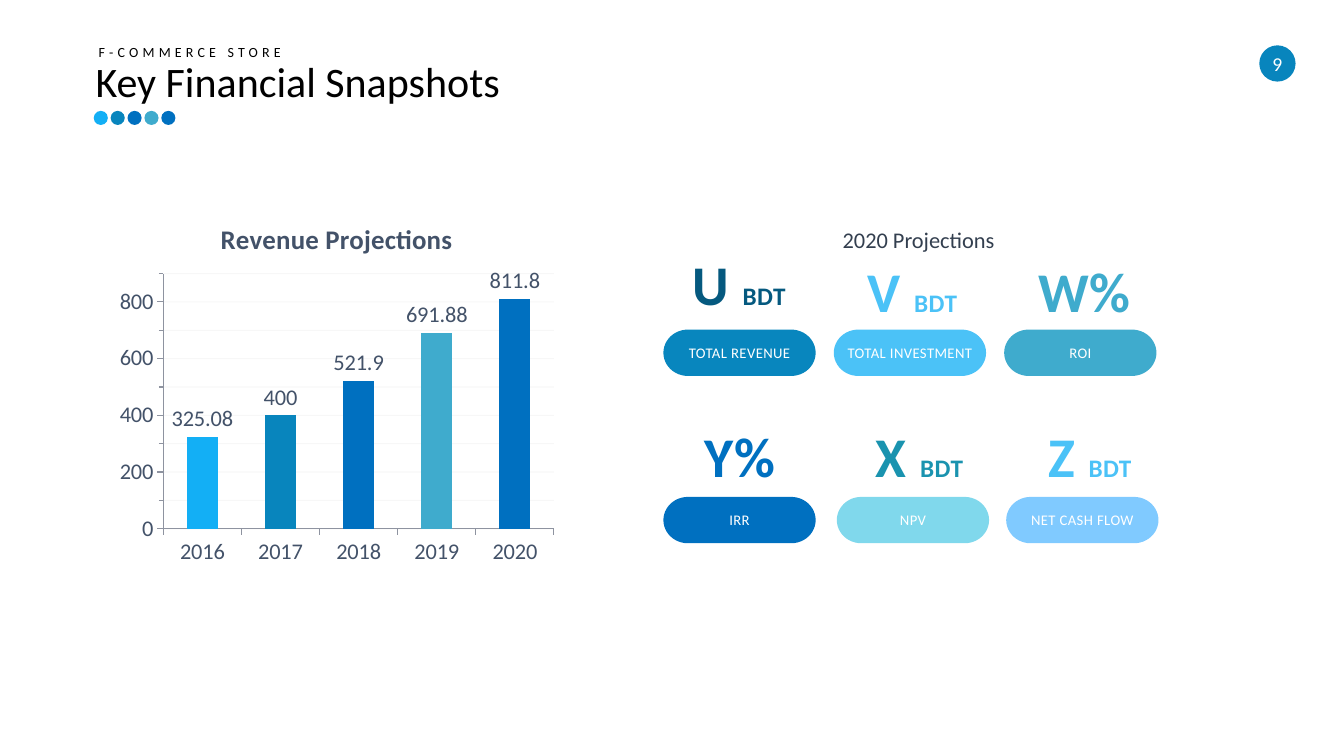
import copy
import pptx
import pptx.chart.data
import pptx.dml.color
import pptx.enum.chart
import pptx.enum.shapes
import pptx.enum.text
import pptx.oxml
import pptx.oxml.ns
import pptx.util
from dataclasses import dataclass

Inches = pptx.util.Inches
Pt = pptx.util.Pt
ALIGN = pptx.enum.text.PP_ALIGN
SHAPE = pptx.enum.shapes.MSO_SHAPE

KICKER = "F-COMMERCE STORE"
TITLE = "Key Financial Snapshots"
PAGE_NUMBER = "9"
DOTS = ["13AFF5", "0885BD", "0070C0", "3FABCD", "0070C0"]
CHART_TITLE = "Revenue Projections"
REVENUE = {"2016": 325.08, "2017": 400, "2018": 521.9, "2019": 691.88, "2020": 811.8}
METRICS_TITLE = "2020 Projections"
# figure, unit, figure colour, figure centre, figure top, label, pill colour, pill left, pill top
METRICS = [
    ("U", "BDT", "05597F", 7.33, 2.48, "TOTAL REVENUE", "0886BE", 6.58, 3.27),
    ("V", "BDT", "4BC2F7", 9.05, 2.55, "TOTAL INVESTMENT", "4BC2F7", 8.27, 3.27),
    ("W%", "", "3FABCD", 10.76, 2.55, "ROI", "3FABCD", 9.96, 3.27),
    ("Y%", "", "0070C0", 7.34, 4.18, "IRR", "0070C0", 6.58, 4.93),
    ("X", "BDT", "1A93AF", 9.12, 4.18, "NPV", "80D8EC", 8.30, 4.93),
    ("Z", "BDT", "4BC2F7", 10.81, 4.18, "NET CASH FLOW", "80CAFF", 9.98, 4.93),
]


@dataclass(frozen=True)
class Theme:
    font: str = "Calibri"
    black: str = "000000"
    white: str = "FFFFFF"
    badge: str = "0885BD"
    chart_text: str = "435269"
    heading: str = "333F4F"
    axis: str = "8E93A0"
    grid: str = "808080"
    title_size: float = 30
    kicker_size: float = 10
    badge_size: float = 14
    body_size: float = 16
    chart_title_size: float = 19.2
    figure_size: float = 40
    unit_size: float = 18
    label_size: float = 10.5


THEME = Theme()


def rgb(code):
    return pptx.dml.color.RGBColor.from_string(code)


def style_font(font, size, color, bold=False):
    font.name = THEME.font
    font.size = Pt(size)
    font.bold = bold
    font.color.rgb = rgb(color)


def add_span(para, text, size, color, bold=False, spacing=0):
    """Add one run; spacing is the letter spacing in points."""
    span = para.add_run()
    span.text = text
    style_font(span.font, size, color, bold)
    if spacing:
        span._r.get_or_add_rPr().set("spc", str(round(spacing * 100)))


def clear_margins(frame):
    frame.margin_left = frame.margin_right = 0
    frame.margin_top = frame.margin_bottom = 0


def add_text_box(page, left, top, width, height, align=ALIGN.LEFT):
    box = page.shapes.add_textbox(Inches(left), Inches(top), Inches(width), Inches(height))
    box.text_frame.word_wrap = False
    para = box.text_frame.paragraphs[0]
    para.alignment = align
    return box.text_frame, para


def add_filled_shape(page, kind, left, top, width, height, color):
    shape = page.shapes.add_shape(kind, Inches(left), Inches(top), Inches(width), Inches(height))
    shape.shadow.inherit = False
    shape.fill.solid()
    shape.fill.fore_color.rgb = rgb(color)
    shape.line.fill.background()
    return shape


def add_label(shape, text, size, spacing=0):
    """Centre white text inside a filled shape."""
    frame = shape.text_frame
    clear_margins(frame)
    frame.word_wrap = False
    frame.vertical_anchor = pptx.enum.text.MSO_ANCHOR.MIDDLE
    para = frame.paragraphs[0]
    para.alignment = ALIGN.CENTER
    add_span(para, text, size, THEME.white, spacing=spacing)


def add_header(page):
    badge = add_filled_shape(page, SHAPE.OVAL, 12.49, 0.45, 0.36, 0.36, THEME.badge)
    add_label(badge, PAGE_NUMBER, THEME.badge_size)
    frame, para = add_text_box(page, 0.88, 0.38, 2.07, 0.27)
    add_span(para, KICKER, THEME.kicker_size, THEME.black, spacing=3)
    frame, para = add_text_box(page, 0.85, 0.5, 4.26, 0.61)
    add_span(para, TITLE, THEME.title_size, THEME.black)
    for index, color in enumerate(DOTS):
        add_filled_shape(page, SHAPE.OVAL, 0.93 + index * 0.1675, 1.1, 0.14, 0.14, color)


def set_plot_area(chart, left, top, width, height):
    """Fix the inner plot area, in fractions of the chart."""
    layout = pptx.oxml.parse_xml(
        f'<c:layout {pptx.oxml.ns.nsdecls("c")}><c:manualLayout><c:layoutTarget val="inner"/>'
        '<c:xMode val="edge"/><c:yMode val="edge"/>'
        f'<c:x val="{left}"/><c:y val="{top}"/><c:w val="{width}"/><c:h val="{height}"/>'
        '</c:manualLayout></c:layout>')
    plot_area = chart._chartSpace.chart.plotArea
    for old in plot_area.findall(pptx.oxml.ns.qn("c:layout")):
        plot_area.remove(old)
    plot_area.insert(0, layout)


def style_gridlines(axis):
    """Draw faint major gridlines and give the minor ones the same look."""
    line = axis.major_gridlines.format.line
    line.color.rgb = rgb(THEME.grid)
    line.width = Pt(0.75)
    axis.has_minor_gridlines = True
    qn = pptx.oxml.ns.qn
    major = axis._element.find(qn("c:majorGridlines"))
    color = major.find(".//" + qn("a:srgbClr"))
    color.append(pptx.oxml.parse_xml(f'<a:alpha {pptx.oxml.ns.nsdecls("a")} val="5000"/>'))
    minor = axis._element.find(qn("c:minorGridlines"))
    minor.append(copy.deepcopy(major.find(qn("c:spPr"))))


def add_revenue_chart(page):
    data = pptx.chart.data.CategoryChartData()
    data.categories = list(REVENUE)
    data.add_series("Series 1", list(REVENUE.values()))
    chart = page.shapes.add_chart(
        pptx.enum.chart.XL_CHART_TYPE.COLUMN_CLUSTERED,
        Inches(1.1), Inches(2.01), Inches(4.48), Inches(3.67), data).chart
    style_font(chart.font, THEME.body_size, THEME.chart_text)
    chart.has_legend = False
    chart.has_title = True
    add_span(chart.chart_title.text_frame.paragraphs[0], CHART_TITLE,
             THEME.chart_title_size, THEME.chart_text, bold=True)
    chart.chart_title.include_in_layout = False
    set_plot_area(chart, 0.116, 0.192, 0.865, 0.69)

    outside = pptx.enum.chart.XL_TICK_MARK.OUTSIDE
    for axis in (chart.category_axis, chart.value_axis):
        axis.major_tick_mark = outside
        axis.format.line.color.rgb = rgb(THEME.axis)
        axis.format.line.width = Pt(0.75)
    values = chart.value_axis
    values.minimum_scale, values.maximum_scale = 0, 900
    values.major_unit, values.minor_unit = 200, 100
    values.minor_tick_mark = outside
    style_gridlines(values)

    plot = chart.plots[0]
    plot.gap_width = 150
    plot.vary_by_categories = False
    series = plot.series[0]
    series.format.fill.solid()
    series.format.fill.fore_color.rgb = rgb(DOTS[0])
    for index, color in enumerate(DOTS[1:], 1):
        fill = series.points[index].format.fill
        fill.solid()
        fill.fore_color.rgb = rgb(color)
    labels = series.data_labels
    labels.show_value = True
    labels.position = pptx.enum.chart.XL_LABEL_POSITION.OUTSIDE_END
    style_font(labels.font, THEME.body_size, THEME.chart_text)


def add_metrics(page):
    frame, para = add_text_box(page, 8.26, 2.14, 1.73, 0.4)
    para.line_spacing = 1.2
    add_span(para, METRICS_TITLE, THEME.body_size, THEME.heading)
    width = 1.3
    for figure, unit, color, centre, top, label, pill_color, pill_left, pill_top in METRICS:
        frame, para = add_text_box(page, centre - width / 2, top, width, 0.67, ALIGN.CENTER)
        clear_margins(frame)
        add_span(para, figure + " " if unit else figure, THEME.figure_size, color, True, 0.3)
        if unit:
            add_span(para, unit, THEME.unit_size, color, True, 0.3)
        pill = add_filled_shape(page, SHAPE.FLOWCHART_TERMINATOR,
                                pill_left, pill_top, 1.51, 0.46, pill_color)
        add_label(pill, label, THEME.label_size, 0.3)


def main():
    deck = pptx.Presentation()
    deck.slide_width, deck.slide_height = Inches(13.33), Inches(7.5)
    page = deck.slides.add_slide(deck.slide_layouts[6])
    add_header(page)
    add_revenue_chart(page)
    add_metrics(page)
    deck.save("out.pptx")


if __name__ == "__main__":
    main()
